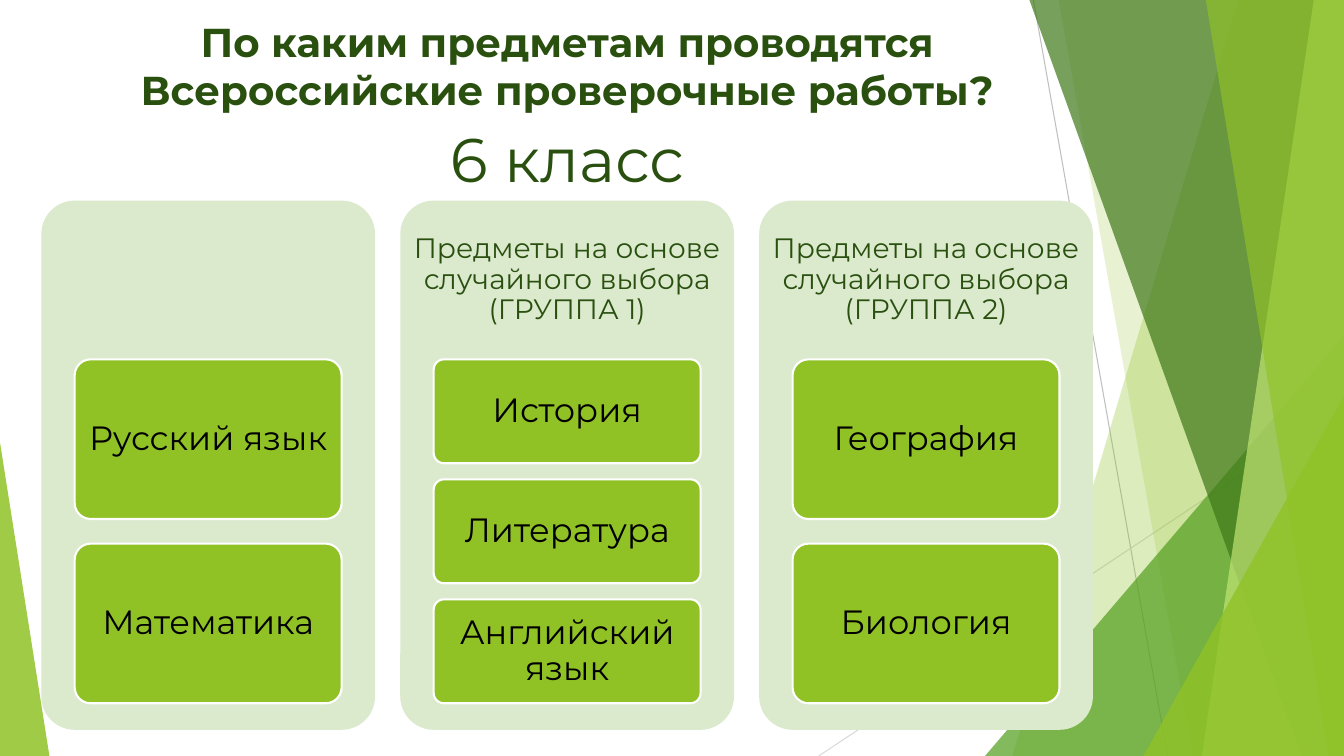
from lxml.etree import SubElement
from pptx import Presentation
from pptx.dml.color import RGBColor
from pptx.enum.shapes import MSO_CONNECTOR, MSO_SHAPE
from pptx.enum.text import MSO_ANCHOR, PP_ALIGN
from pptx.oxml.ns import qn
from pptx.util import Inches, Pt

SLIDE_W, SLIDE_H = 13.33, 7.5
FONT = "Montserrat"
COLORS = {
    "lime": "90C226", "green": "54A021", "forest": "3F7819", "pale": "C0E474",
    "panel": "DBE9CD", "heading": "2A5010", "black": "000000", "white": "FFFFFF",
    "line_dark": "BFBFBF", "line_light": "D9D9D9",
}
COLUMNS = [
    ("", ["Русский язык", "Математика"]),
    ("Предметы на основе случайного выбора (ГРУППА 1)",
     ["История", "Литература", "Английский язык"]),
    ("Предметы на основе случайного выбора (ГРУППА 2)",
     ["География", "Биология"]),
]


def rgb(name):
    return RGBColor.from_string(COLORS[name])


def paint(sp, color, opacity=100):
    """Give a shape a flat fill without outline or shadow."""
    sp.shadow.inherit = False
    sp.fill.solid()
    sp.fill.fore_color.rgb = rgb(color)
    sp.line.fill.background()
    if opacity < 100:
        clr = sp.fill._xPr.find(".//" + qn("a:srgbClr"))
        SubElement(clr, qn("a:alpha")).set("val", str(opacity * 1000))


def write(sp, text, size, color, bold=False, anchor=MSO_ANCHOR.TOP,
          insets=(0.1, 0.05), spacing=None):
    """Fill a shape with one centred paragraph."""
    tf = sp.text_frame
    tf.word_wrap = True
    tf.vertical_anchor = anchor
    tf.margin_left = tf.margin_right = Inches(insets[0])
    tf.margin_top = tf.margin_bottom = Inches(insets[1])
    p = tf.paragraphs[0]
    p.text = text
    p.alignment = PP_ALIGN.CENTER
    p.line_spacing = spacing
    font = p.runs[0].font
    font.name, font.size, font.bold = FONT, Pt(size), bold
    font.color.rgb = rgb(color)


def add_box(s, kind, left, top, width, height, adj):
    sp = s.shapes.add_shape(kind, Inches(left), Inches(top), Inches(width), Inches(height))
    sp.adjustments[0] = adj
    return sp


def add_text(s, left, top, width, height, *args, **kwargs):
    sp = s.shapes.add_textbox(Inches(left), Inches(top), Inches(width), Inches(height))
    write(sp, *args, **kwargs)


def add_thin_line(s, x1, y1, x2, y2, color):
    line = s.shapes.add_connector(MSO_CONNECTOR.STRAIGHT, Inches(x1), Inches(y1),
                                  Inches(x2), Inches(y2))
    line.line.color.rgb = rgb(color)
    line.line.width = Pt(0.75)
    SubElement(line._element.spPr, qn("a:effectLst"))


def add_ray(s, top_x, bottom_x, color, opacity):
    """Full-height facet from a slanted left edge to the slide's right edge."""
    builder = s.shapes.build_freeform(Inches(top_x), 0)
    builder.add_line_segments([(Inches(x), Inches(y)) for x, y in (
        (SLIDE_W, 0), (SLIDE_W, SLIDE_H), (bottom_x, SLIDE_H))])
    paint(builder.convert_to_shape(), color, opacity)


def add_corner(s, left, width, height, apex, color, opacity):
    """Right triangle standing on the bottom edge of the slide."""
    sp = add_box(s, MSO_SHAPE.ISOSCELES_TRIANGLE, left, SLIDE_H - height, width, height, apex)
    paint(sp, color, opacity)


def add_backdrop(s):
    add_thin_line(s, 10.25, 0, 11.58, SLIDE_H, "line_dark")
    add_thin_line(s, SLIDE_W, 4.03, 8.12, SLIDE_H, "line_light")
    add_ray(s, 12.28, 10.04, "lime", 30)
    add_ray(s, 10.5, 11.83, "lime", 20)
    add_corner(s, 9.77, 3.56, 4.17, 1, "green", 72)
    add_ray(s, 10.21, 12.91, "forest", 70)
    add_ray(s, 13.03, 11.92, "pale", 70)
    add_ray(s, 11.96, 13.18, "lime", 65)
    add_corner(s, 11.34, 1.99, 3.57, 1, "lime", 80)
    add_corner(s, 0, 0.49, 3.11, 0, "lime", 85)


def add_column(s, left, top, width, height, heading, subjects):
    """Panel with a heading in its top 30% and cards sharing the next 65%."""
    panel = add_box(s, MSO_SHAPE.ROUNDED_RECTANGLE, left, top, width, height, 0.1)
    paint(panel, "panel")
    head_h = 0.3 * height
    if heading:
        add_text(s, left, top, width, head_h, heading, 20, "heading",
                 anchor=MSO_ANCHOR.MIDDLE, insets=(0.08, 0.08), spacing=0.9)
    n = len(subjects)
    gap_ratio = 0.154
    card_h = 0.65 * height / (n + (n - 1) * gap_ratio)
    for i, subject in enumerate(subjects):
        card = add_box(s, MSO_SHAPE.ROUNDED_RECTANGLE, left + 0.1 * width,
                       top + head_h + i * card_h * (1 + gap_ratio),
                       0.8 * width, card_h, 0.1)
        paint(card, "lime")
        card.line.color.rgb = rgb("white")
        card.line.width = Pt(1.5)
        write(card, subject, 24, "black", anchor=MSO_ANCHOR.MIDDLE,
              insets=(0.07, 0.05), spacing=0.9)


def add_columns(s, left, top, height, width=3.31, pitch=3.56):
    for i, (heading, subjects) in enumerate(COLUMNS):
        add_column(s, left + i * pitch, top, width, height, heading, subjects)


def add_titles(s, left, top, width):
    add_text(s, left, top, width, 1.02,
             "По каким предметам проводятся Всероссийские проверочные работы?",
             28.8, "heading", bold=True)
    add_text(s, left + 2.82, top + 1.03, 4.56, 0.84, "6 класс", 44, "heading")


def main():
    prs = Presentation()
    prs.slide_width, prs.slide_height = Inches(SLIDE_W), Inches(SLIDE_H)
    s = prs.slides.add_slide(prs.slide_layouts[6])
    add_backdrop(s)
    add_titles(s, 0.53, 0.12, 10.19)
    add_columns(s, 0.41, 1.99, 5.25)
    prs.save("out.pptx")


if __name__ == "__main__":
    main()
